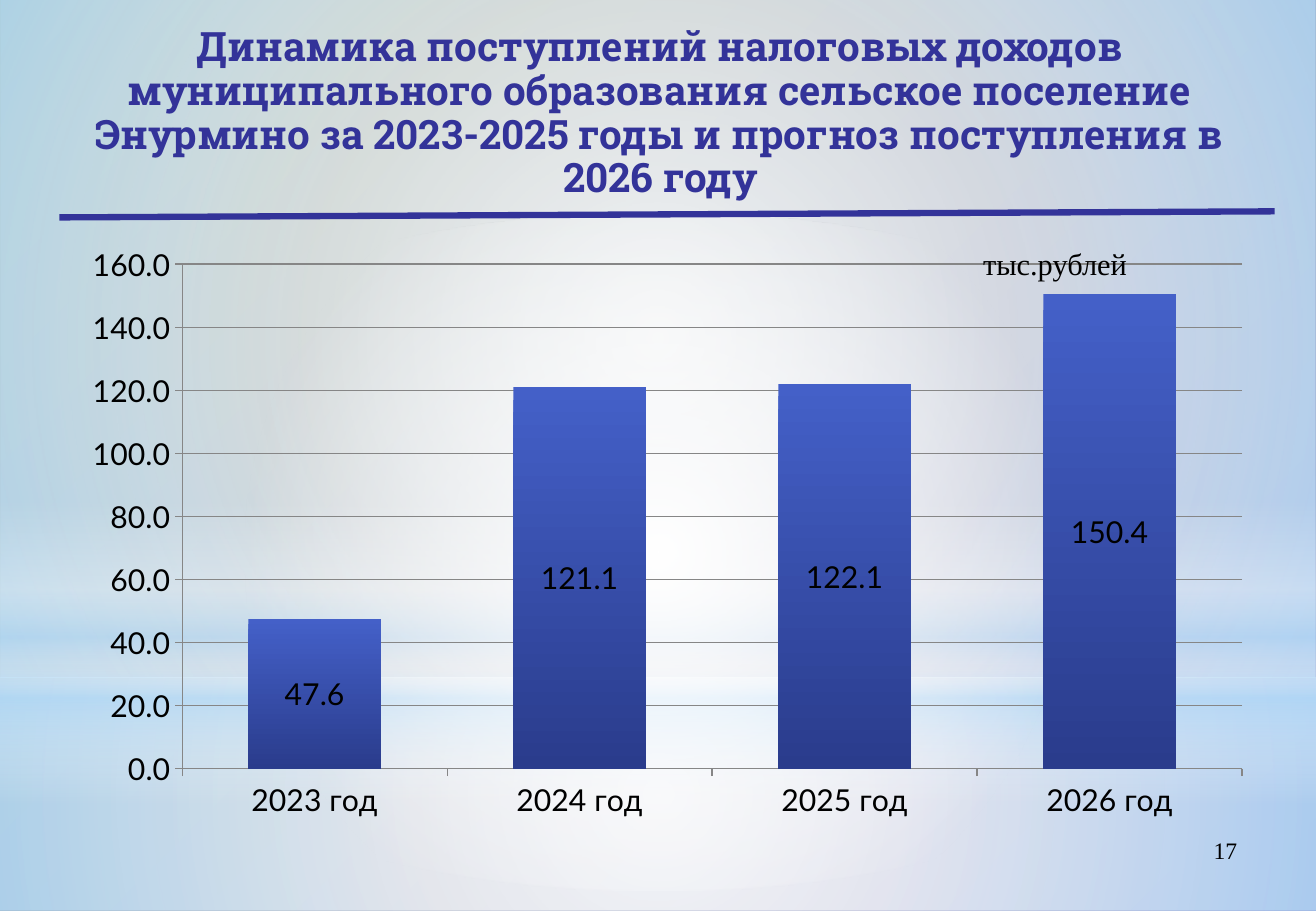
import lxml.etree
import pptx
import pptx.chart.data
import pptx.dml.color
import pptx.enum.chart
import pptx.enum.shapes
import pptx.enum.text
import pptx.oxml
import pptx.oxml.ns
import pptx.util

Inches = pptx.util.Inches
Pt = pptx.util.Pt
qn = pptx.oxml.ns.qn
SHAPES = pptx.enum.shapes.MSO_SHAPE
ALIGN = pptx.enum.text.PP_ALIGN

SLIDE_WIDTH, SLIDE_HEIGHT = 10.84, 7.5
INDIGO, BLACK, GRID_GRAY = "333399", "000000", "868686"
TITLE = ("Динамика поступлений налоговых доходов муниципального образования "
         "сельское поселение Энурмино за 2023-2025 годы и прогноз поступления в 2026 году")
INCOME = {"2023 год": 47.6, "2024 год": 121.1, "2025 год": 122.1, "2026 год": 150.4}
NUMBER_FORMAT = "#,##0.0"
CENTER_OUT = ('<a:path path="circle"><a:fillToRect l="50000" t="50000" '
              'r="50000" b="50000"/></a:path>')
TOP_DOWN = '<a:lin ang="5400000" scaled="0"/>'

# kind, top, height, direction, stops as (position %, colour, opacity %)
GLOWS = [
    (SHAPES.RECTANGLE, 5.58, 1.92, CENTER_OUT,
     [(0, "FFFFFF", 91), (37, "FFFFFF", 76), (100, "B4DCFA", 79)]),
    (SHAPES.RECTANGLE, 0, 5.58, CENTER_OUT,
     [(0, "FFFFFF", 89), (48, "FFFFFF", 62), (100, "B4DCFA", 79)]),
    (SHAPES.RECTANGLE, 4.12, 2.5, TOP_DOWN,
     [(0, "FFFFFF", 0), (29, "FFFFFF", 30), (45, "B4DCFA", 40),
      (55, "FFFFFF", 26), (65, "B4DCFA", 60), (100, "FFFFFF", 0)]),
    (SHAPES.OVAL, 1.75, 5.58, CENTER_OUT, [(0, "FFFFFF", 100), (56, "FFFFFF", 0)]),
]


def color(value):
    return pptx.dml.color.RGBColor.from_string(value)


def fill_gradient(fill, start, end, angle):
    """Blend two colours; the angle is counter-clockwise."""
    fill.gradient()
    fill.gradient_angle = angle
    for stop, value in zip(fill.gradient_stops, (start, end)):
        stop.color.rgb = color(value)


def add_glow(slide, kind, top, height, direction, stops):
    """Add a full-width shape with a translucent gradient."""
    shape = slide.shapes.add_shape(
        kind, 0, Inches(top), Inches(SLIDE_WIDTH), Inches(height))
    shape.shadow.inherit = False
    shape.line.fill.background()
    shape.fill.background()
    stop_xml = "".join(
        f'<a:gs pos="{position * 1000}"><a:srgbClr val="{value}">'
        f'<a:alpha val="{opacity * 1000}"/></a:srgbClr></a:gs>'
        for position, value, opacity in stops)
    gradient = pptx.oxml.parse_xml(
        f'<a:gradFill {pptx.oxml.ns.nsdecls("a")} rotWithShape="1">'
        f'<a:gsLst>{stop_xml}</a:gsLst>{direction}</a:gradFill>')
    properties = shape.element.spPr
    properties.replace(properties.find(qn("a:noFill")), gradient)


def add_run(paragraph, text, size, font, value, bold=False):
    run = paragraph.add_run()
    run.text = text
    run.font.size = Pt(size)
    run.font.name = font
    run.font.bold = bold
    run.font.color.rgb = color(value)


def set_title(slide, text):
    title = slide.shapes.title
    title.element.getparent().append(title.element)  # bring in front of the glows
    title.left, title.top = Inches(0.56), Inches(0.15)
    title.width, title.height = Inches(9.75), Inches(1.58)
    frame = title.text_frame
    frame.auto_size = pptx.enum.text.MSO_AUTO_SIZE.NONE
    frame.vertical_anchor = pptx.enum.text.MSO_ANCHOR.MIDDLE
    paragraph = frame.paragraphs[0]
    paragraph.alignment = ALIGN.CENTER
    paragraph.line_spacing = 0.9
    add_run(paragraph, text, 24, "Roboto Slab", INDIGO, bold=True)


def add_label(slide, text, left, top, width, height, size, alignment, wrap):
    box = slide.shapes.add_textbox(
        Inches(left), Inches(top), Inches(width), Inches(height))
    box.text_frame.word_wrap = wrap
    paragraph = box.text_frame.paragraphs[0]
    paragraph.alignment = alignment
    add_run(paragraph, text, size, "Times New Roman", BLACK)


def add_rule(slide):
    rule = slide.shapes.add_connector(
        pptx.enum.shapes.MSO_CONNECTOR.STRAIGHT,
        Inches(0.49), Inches(1.79), Inches(10.5), Inches(1.74))
    rule.line.color.rgb = color(INDIGO)
    rule.line.width = Pt(3.75)
    lxml.etree.SubElement(rule.element.spPr, qn("a:effectLst"))


def set_plot_layout(chart, **fractions):
    """Fix the inner plot area as fractions of the chart frame."""
    plot_area = chart.element.find(".//" + qn("c:plotArea"))
    for layout in plot_area.findall(qn("c:layout")):
        plot_area.remove(layout)
    values = "".join(f'<c:{name} val="{value}"/>' for name, value in fractions.items())
    plot_area.insert(0, pptx.oxml.parse_xml(
        f'<c:layout {pptx.oxml.ns.nsdecls("c")}><c:manualLayout>'
        '<c:layoutTarget val="inner"/><c:xMode val="edge"/><c:yMode val="edge"/>'
        f'{values}</c:manualLayout></c:layout>'))


def add_income_chart(slide):
    data = pptx.chart.data.CategoryChartData(number_format=NUMBER_FORMAT)
    data.categories = list(INCOME)
    data.add_series("Series 1", list(INCOME.values()))
    chart = slide.shapes.add_chart(
        pptx.enum.chart.XL_CHART_TYPE.COLUMN_STACKED,
        Inches(0.52), Inches(1.93), Inches(9.81), Inches(4.89), data).chart
    chart.has_legend = False
    chart.has_title = False
    chart.font.size = Pt(17.9)
    chart.font.name = "Lato"
    chart.font.color.rgb = color(BLACK)

    plot = chart.plots[0]
    plot.gap_width = 100
    plot.overlap = 100
    plot.vary_by_categories = False
    fill_gradient(plot.series[0].format.fill, "4460C8", "2A3C8C", 270)
    plot.has_data_labels = True
    labels = plot.data_labels
    labels.show_value = True
    labels.number_format = NUMBER_FORMAT
    labels.number_format_is_linked = False
    labels.position = pptx.enum.chart.XL_LABEL_POSITION.CENTER

    value_axis = chart.value_axis
    value_axis.minimum_scale, value_axis.maximum_scale = 0, 160
    value_axis.major_unit = 20
    value_axis.tick_labels.number_format = NUMBER_FORMAT
    value_axis.tick_labels.number_format_is_linked = False
    value_axis.has_major_gridlines = True
    for axis in (value_axis, chart.category_axis):
        axis.major_tick_mark = pptx.enum.chart.XL_TICK_MARK.OUTSIDE
    for part in (value_axis, chart.category_axis, value_axis.major_gridlines):
        part.format.line.color.rgb = color(GRID_GRAY)
        part.format.line.width = Pt(0.75)
    set_plot_layout(chart, x=0.1, y=0.05, w=0.89, h=0.85)


def main():
    presentation = pptx.Presentation()
    presentation.slide_width = Inches(SLIDE_WIDTH)
    presentation.slide_height = Inches(SLIDE_HEIGHT)
    slide = presentation.slides.add_slide(presentation.slide_layouts[5])
    fill_gradient(slide.background.fill, "96AB94", "8488C4", 315)
    for glow in GLOWS:
        add_glow(slide, *glow)
    add_label(slide, "17", 7.76, 6.83, 2.53, 0.52, 14, ALIGN.RIGHT, True)
    set_title(slide, TITLE)
    add_rule(slide)
    add_income_chart(slide)
    add_label(slide, "тыс.рублей", 8, 1.97, 1.4, 0.4, 18, ALIGN.LEFT, False)
    presentation.save("out.pptx")


if __name__ == "__main__":
    main()
